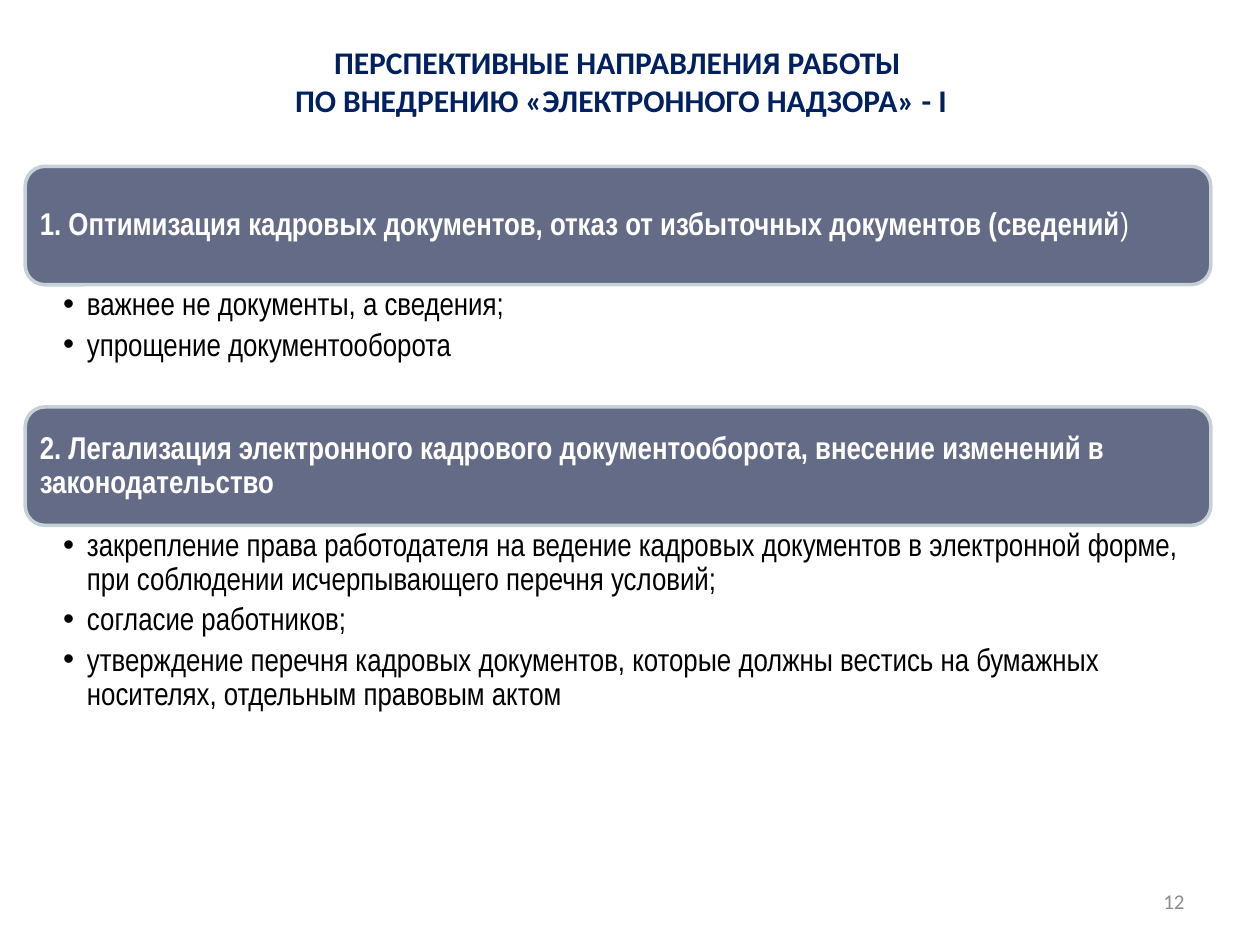
"""Build the slide on the prospects for introducing electronic supervision."""
from lxml.etree import SubElement
from pptx import Presentation
from pptx.dml.color import RGBColor
from pptx.enum.shapes import MSO_SHAPE
from pptx.enum.text import MSO_ANCHOR, MSO_AUTO_SIZE, PP_ALIGN
from pptx.oxml.ns import qn
from pptx.util import Inches, Pt

NAVY = RGBColor(0x00, 0x20, 0x60)
SLATE = RGBColor(0x64, 0x6B, 0x86)
PALE_BLUE = RGBColor(0xC5, 0xD1, 0xD7)
WHITE = RGBColor(0xFF, 0xFF, 0xFF)
BLACK = RGBColor(0x00, 0x00, 0x00)
GRAY = RGBColor(0x8C, 0x8C, 0x8C)

LEFT, WIDTH, HEADING_HEIGHT = 0.2, 9.41, 0.94
SECTIONS = [
    (1.32, 0.96,
     [("1. Оптимизация кадровых документов, отказ от избыточных документов (сведений", True),
      (")", False)],
     ["важнее не документы, а сведения;",
      "упрощение документооборота"]),
    (3.23, 1.46,
     [("2. Легализация электронного кадрового документооборота, "
       "внесение изменений в законодательство", True)],
     ["закрепление права работодателя на ведение кадровых документов в электронной форме, "
      "при соблюдении исчерпывающего перечня условий;",
      "согласие работников;",
      "утверждение перечня кадровых документов, которые должны вестись на бумажных "
      "носителях, отдельным правовым актом"]),
]


def write(paragraph, text, color, font="Arial Narrow", size=18, bold=False,
          align=PP_ALIGN.LEFT, line_spacing=1.0, space_after=0):
    paragraph.alignment = align
    paragraph.line_spacing = line_spacing
    paragraph.space_before = Pt(0)
    paragraph.space_after = Pt(space_after)
    run = paragraph.add_run()
    run.text = text
    run.font.name = font
    run.font.size = Pt(size)
    run.font.bold = bold
    run.font.color.rgb = color


def set_frame(shape, anchor, left, top, right, bottom):
    frame = shape.text_frame
    frame.word_wrap = True
    frame.auto_size = MSO_AUTO_SIZE.NONE
    frame.vertical_anchor = anchor
    frame.margin_left, frame.margin_top = Inches(left), Inches(top)
    frame.margin_right, frame.margin_bottom = Inches(right), Inches(bottom)
    return frame


presentation = Presentation()
presentation.slide_width = Inches(10)
presentation.slide_height = Inches(7.5)
slide = presentation.slides.add_slide(presentation.slide_layouts[3])

title = slide.shapes.title
title.left, title.top = Inches(0.43), Inches(0.29)
title.width, title.height = Inches(9), Inches(0.63)
frame = set_frame(title, MSO_ANCHOR.TOP, 0.1, 0.05, 0.1, 0.05)
title_lines = ["ПЕРСПЕКТИВНЫЕ НАПРАВЛЕНИЯ РАБОТЫ ",
               "ПО ВНЕДРЕНИЮ «ЭЛЕКТРОННОГО НАДЗОРА» - I"]
for index, line in enumerate(title_lines):
    paragraph = frame.add_paragraph() if index else frame.paragraphs[0]
    write(paragraph, line, NAVY, font="Calibri", bold=True, align=PP_ALIGN.CENTER)

for number, (top, list_height, heading_runs, items) in enumerate(SECTIONS, start=1):
    heading = slide.shapes.add_shape(MSO_SHAPE.ROUNDED_RECTANGLE, Inches(LEFT), Inches(top),
                                     Inches(WIDTH), Inches(HEADING_HEIGHT))
    heading.shadow.inherit = False
    heading.fill.solid()
    heading.fill.fore_color.rgb = SLATE
    heading.line.color.rgb = PALE_BLUE
    heading.line.width = Pt(2)
    frame = set_frame(heading, MSO_ANCHOR.MIDDLE, 0.07, 0.07, 0.07, 0.07)
    for text, bold in heading_runs:
        write(frame.paragraphs[0], text, WHITE, bold=bold, line_spacing=0.9)

    body = slide.placeholders[number]
    body.left, body.top = Inches(LEFT), Inches(top + HEADING_HEIGHT)
    body.width, body.height = Inches(WIDTH), Inches(list_height)
    frame = set_frame(body, MSO_ANCHOR.TOP, 0.3, 0.03, 0.14, 0.03)
    for index, item in enumerate(items):
        paragraph = frame.add_paragraph() if index else frame.paragraphs[0]
        write(paragraph, item, BLACK, line_spacing=0.9, space_after=3.6)
        properties = paragraph._p.get_or_add_pPr()
        properties.set("marL", str(Inches(0.19)))
        properties.set("indent", str(Inches(-0.19)))
        SubElement(properties, qn("a:buChar"), char="•")

page_number = slide.shapes.add_textbox(Inches(7.17), Inches(6.95), Inches(2.33), Inches(0.4))
frame = set_frame(page_number, MSO_ANCHOR.MIDDLE, 0.1, 0.05, 0.1, 0.05)
write(frame.paragraphs[0], "12", GRAY, font="Calibri", size=12, align=PP_ALIGN.RIGHT)

presentation.save("out.pptx")
